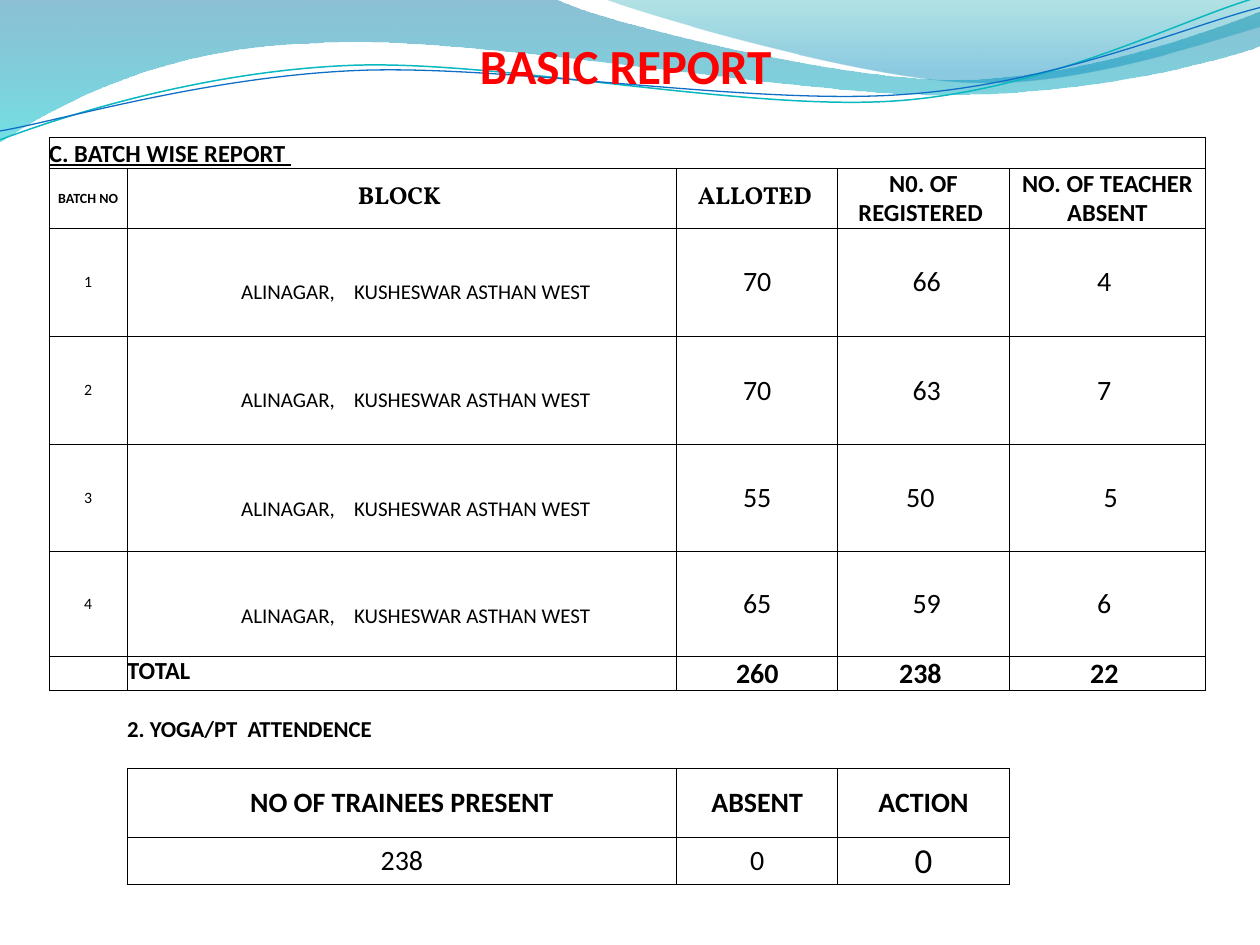
from dataclasses import dataclass

from lxml.etree import SubElement
from pptx import Presentation
from pptx.dml.color import RGBColor
from pptx.enum.text import MSO_ANCHOR, MSO_AUTO_SIZE, PP_ALIGN
from pptx.oxml.ns import qn
from pptx.util import Inches, Pt


@dataclass(frozen=True)
class Theme:
    white: str = "FFFFFF"
    black: str = "000000"
    title: str = "FF0000"
    teal_line: str = "0AB8BF"
    blue_line: str = "0F6FC6"
    body_font: str = "Calibri"
    heading_font: str = "Vollkorn"
    title_size: float = 28
    big_size: float = 20
    figure_size: float = 16
    heading_size: float = 14
    section_size: float = 13
    block_size: float = 12
    number_size: float = 9
    small_size: float = 8
    empty_size: float = 6
    grid_width: float = 0.5


THEME = Theme()

# Cell formats: size, bold, and what departs from a centred, plain cell
FORMATS = {
    "section": dict(size=THEME.heading_size, bold=True, underline=True,
                    align=PP_ALIGN.LEFT, anchor=MSO_ANCHOR.BOTTOM, fill=True),
    "small_head": dict(size=THEME.small_size, bold=True, fill=True),
    "serif_head": dict(size=THEME.heading_size, bold=True, name=THEME.heading_font, fill=True),
    "head": dict(size=THEME.heading_size, bold=True, fill=True),
    "number": dict(size=THEME.number_size, fill=True),
    "block": dict(size=THEME.block_size, anchor=MSO_ANCHOR.TOP, top=0.41, left=0.22, gap=8.1),
    "figure": dict(size=THEME.figure_size),
    "figure_right": dict(size=THEME.figure_size, left=0.05),
    "figure_left": dict(size=THEME.figure_size, right=0.05),
    "total_head": dict(size=THEME.heading_size, bold=True, align=PP_ALIGN.LEFT,
                       anchor=MSO_ANCHOR.TOP, fill=True),
    "total": dict(size=THEME.figure_size, bold=True),
    "total_left": dict(size=THEME.figure_size, bold=True, right=0.05),
    "yoga_title": dict(size=THEME.section_size, bold=True, align=PP_ALIGN.LEFT, gap=2.9),
    "yoga_head": dict(size=THEME.figure_size, bold=True, fill=True),
    "action": dict(size=THEME.big_size, fill=True),
    "blank": dict(fill=True),
}

COLUMNS = [0.62, 4.36, 1.28, 1.36, 1.56]
ROWS = [0.25, 0.47, 0.86, 0.86, 0.85, 0.83, 0.27, 0.16, 0.3, 0.16, 0.55, 0.37]
BATCHES = [(70, 66, 4), (70, 63, 7), (55, 50, 5), (65, 59, 6)]
USUAL_FIGURES = ("figure", "figure_right", "figure_left")
BATCH_FORMATS = [USUAL_FIGURES, USUAL_FIGURES,
                 ("figure", "figure_left", "figure_right"), USUAL_FIGURES]
GAP = "|"  # stands for one widened space
BLOCKS = f"ALINAGAR,{GAP}KUSHESWAR ASTHAN WEST"

# Wave outlines in inches: a start, then cubic curves (6 numbers) or lines (2)
UPPER_WAVE = [(0, 0), (4.4, -0.01), (4.76, 0.17, 6.64, 0.63, 7.58, 0.63),
              (8.53, 0.63, 9.58, 0.26, 10, 0.09), (10.01, 0.36),
              (9.83, 0.44, 8.7, 0.76, 7.46, 0.75), (6.22, 0.75, 3.82, 0.28, 2.57, 0.34),
              (1.29, 0.36, 0.46, 0.83, -0.01, 1.13)]
RIGHT_WAVE = [(4.79, -0.01), (5.09, 0.11, 6.82, 0.62, 7.69, 0.65),
              (8.56, 0.69, 9.61, 0.32, 10, 0.21), (10, 0)]
TEAL_CURVE = [(0, 1.11), (0.48, 0.93, 1.58, 0.57, 2.77, 0.52),
              (3.95, 0.47, 5.93, 0.89, 7.13, 0.8), (8.33, 0.71, 9.38, 0.15, 9.98, -0.02)]
BLUE_CURVE = [(0, 1.04), (0.47, 0.96, 1.64, 0.61, 2.83, 0.56),
              (4.03, 0.51, 5.97, 0.84, 7.17, 0.75), (8.36, 0.67, 9.41, 0.21, 10, 0.06)]


def add_outline(slide, left, top, outline, close):
    """Build a freeform, then join each three curve points into one cubic curve."""
    points = [(Inches(left + segment[i]), Inches(top + segment[i + 1]))
              for segment in outline for i in range(0, len(segment), 2)]
    builder = slide.shapes.build_freeform(*points[0])
    builder.add_line_segments(points[1:], close=close)
    shape = builder.convert_to_shape()
    shape.shadow.inherit = False
    steps = iter(list(shape.element.spPr.iter(qn("a:lnTo"))))
    for segment in outline[1:]:
        parts = [next(steps) for _ in range(len(segment) // 2)]
        if len(parts) == 3:
            curve = SubElement(parts[0].getparent(), qn("a:cubicBezTo"))
            parts[0].addprevious(curve)
            for part in parts:
                curve.append(part[0])
                part.getparent().remove(part)
    return shape


def add_waves(slide, left, top):
    # Translucent bands: position, colour, opacity in percent
    for outline, stops in ((UPPER_WAVE, ((0, "0074A1", 45), (1, "00C6CF", 55))),
                           (RIGHT_WAVE, ((0, "00A1A9", 30), (0.8, "008BBF", 45)))):
        band = add_outline(slide, left, top, outline, True)
        band.line.fill.background()
        band.fill.gradient()
        band.fill.gradient_angle = 270
        for stop, (position, colour, _) in zip(band.fill.gradient_stops, stops):
            stop.position = position
            stop.color.rgb = RGBColor.from_string(colour)
        for colour_node, (_, _, opacity) in zip(band.element.spPr.iter(qn("a:srgbClr")), stops):
            SubElement(colour_node, qn("a:alpha"), val=str(opacity * 1000))
    # Thin curves
    for outline, colour, width in ((TEAL_CURVE, THEME.teal_line, 0.85),
                                   (BLUE_CURVE, THEME.blue_line, 0.75)):
        curve = add_outline(slide, left, top, outline, False)
        curve.fill.background()
        curve.line.color.rgb = RGBColor.from_string(colour)
        curve.line.width = Pt(width)


def add_run(paragraph, text, colour, **format_values):
    run = paragraph.add_run()
    run.text = text
    run.font.color.rgb = RGBColor.from_string(colour)
    for key, value in format_values.items():
        setattr(run.font, key, value)
    return run


def add_title(slide, left, top, width, height):
    title = slide.shapes.add_textbox(Inches(left), Inches(top), Inches(width), Inches(height))
    title.text_frame.word_wrap = True
    title.text_frame.auto_size = MSO_AUTO_SIZE.SHAPE_TO_FIT_TEXT
    paragraph = title.text_frame.paragraphs[0]
    paragraph.alignment = PP_ALIGN.CENTER
    add_run(paragraph, "BASIC REPORT", THEME.title, name=THEME.body_font,
            size=Pt(THEME.title_size), bold=True)


def report_cells():
    """Map (row, column) to text and format name."""
    cells = {(0, 0): ("C. BATCH WISE REPORT ", "section"), (6, 0): ("", "blank"),
             (8, 1): (f"2. YOGA/PT{GAP}ATTENDENCE", "yoga_title")}

    def put(row, first, texts, names):
        for offset, (text, name) in enumerate(zip(texts, names)):
            cells[row, first + offset] = (str(text), name)

    put(1, 0, ("BATCH NO", "BLOCK ", "ALLOTED ", "N0. OF REGISTERED ", "NO. OF TEACHER ABSENT"),
        ("small_head", "serif_head", "serif_head", "head", "head"))
    for number, (figures, names) in enumerate(zip(BATCHES, BATCH_FORMATS), 1):
        put(number + 1, 0, (number, BLOCKS, *figures), ("number", "block", *names))
    put(6, 1, ("TOTAL", *map(sum, zip(*BATCHES))),
        ("total_head", "total", "total_left", "total_left"))
    put(10, 1, ("NO OF TRAINEES PRESENT", "ABSENT", "ACTION"), ["yoga_head"] * 3)
    put(11, 1, (238, 0, 0), ("figure", "figure", "action"))
    return cells


def has_grid(row, column):
    return (0 <= row <= 6 and 0 <= column <= 4) or (row in (10, 11) and 1 <= column <= 3)


def draw_borders(cell, row, column):
    properties = cell._tc.get_or_add_tcPr()
    edges = (("a:lnL", 0, -1), ("a:lnR", 0, 1), ("a:lnT", -1, 0), ("a:lnB", 1, 0))
    for tag, down, across in edges:
        border = SubElement(properties, qn(tag), w=str(Pt(THEME.grid_width)))
        if has_grid(row, column) or has_grid(row + down, column + across):
            solid = SubElement(border, qn("a:solidFill"))
            SubElement(solid, qn("a:srgbClr"), val=THEME.black)
        else:
            SubElement(border, qn("a:noFill"))


def fill_cell(cell, text, look):
    for side in ("left", "right", "top", "bottom"):
        setattr(cell, f"margin_{side}", Inches(look.get(side, 0)))
    cell.vertical_anchor = look.get("anchor", MSO_ANCHOR.MIDDLE)
    if look.get("fill"):
        cell.fill.solid()
        cell.fill.fore_color.rgb = RGBColor.from_string(THEME.white)
    else:
        cell.fill.background()
    paragraph = cell.text_frame.paragraphs[0]
    if not text:
        SubElement(paragraph._p, qn("a:endParaRPr"), sz=str(THEME.empty_size * 100))
        return
    paragraph.alignment = look.get("align", PP_ALIGN.CENTER)
    font = dict(name=look.get("name", THEME.body_font), size=Pt(look["size"]),
                bold=look.get("bold", False), underline=look.get("underline", False))
    for index, part in enumerate(text.split(GAP)):
        if index:
            space = add_run(paragraph, " ", THEME.black, **font)
            space.font._element.set("spc", str(round(look["gap"] * 100)))
        add_run(paragraph, part, THEME.black, **font)


def add_report(slide, left, top):
    frame = slide.shapes.add_table(len(ROWS), len(COLUMNS), Inches(left), Inches(top),
                                   Inches(sum(COLUMNS)), Inches(sum(ROWS)))
    report = frame.table
    report.first_row = report.horz_banding = False
    # Plain style without grid
    style = next(report._tbl.iter(qn("a:tableStyleId")))
    style.text = "{2D5ABB26-0587-4C30-8999-92F81FD0307C}"
    for column, width in zip(report.columns, COLUMNS):
        column.width = Inches(width)
    for row, height in zip(report.rows, ROWS):
        row.height = Inches(height)
    report.cell(0, 0).merge(report.cell(0, 4))
    report.cell(8, 1).merge(report.cell(8, 3))
    contents = report_cells()
    for row in range(len(ROWS)):
        for column in range(len(COLUMNS)):
            cell = report.cell(row, column)
            text, name = contents.get((row, column), ("", None))
            draw_borders(cell, row, column)
            fill_cell(cell, text, FORMATS.get(name, {}))


def main():
    deck = Presentation()
    deck.slide_width, deck.slide_height = Inches(10), Inches(7.5)
    slide = deck.slides.add_slide(deck.slide_layouts[6])
    add_waves(slide, 0, 0)
    add_title(slide, 3.52, 0.23, 2.89, 0.57)
    add_report(slide, 0.39, 1.09)
    deck.save("out.pptx")


if __name__ == "__main__":
    main()
